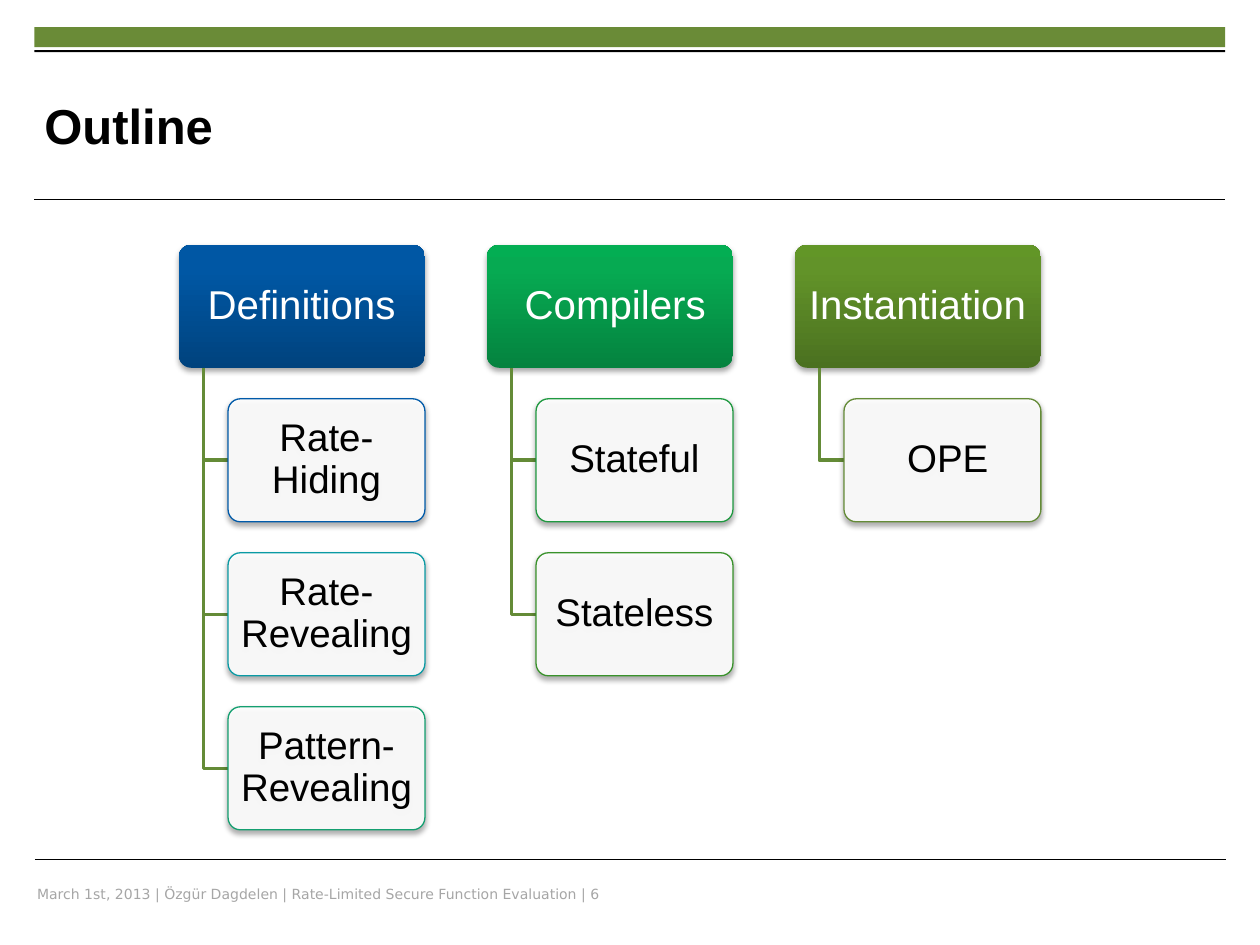
from copy import deepcopy
from lxml import etree
from pptx import Presentation
from pptx import util as u
from pptx.dml.color import RGBColor
from pptx.enum import shapes, text
from pptx.oxml.ns import qn

Pt = u.Pt
BLACK = RGBColor(0, 0, 0)
WHITE = RGBColor(255, 255, 255)
GRAY = RGBColor(0xA6, 0xA6, 0xA6)
BAND = RGBColor(0x6A, 0x8B, 0x37)
GREEN = RGBColor(0x64, 0x8B, 0x37)
BLUE = RGBColor(0x00, 0x5A, 0xA9)
TEAL = RGBColor(0x0A, 0x9A, 0xA4)
JADE = RGBColor(0x14, 0x9F, 0x70)
LEAF = RGBColor(0x1F, 0x99, 0x40)
MOSS = RGBColor(0x39, 0x92, 0x2B)
BLUES = [RGBColor(0x00, 0x43, 0x7E), RGBColor(0x00, 0x57, 0xA4), RGBColor(0x00, 0x58, 0xA5)]
GREENS = [RGBColor(0x05, 0x83, 0x3F), RGBColor(0x06, 0xAA, 0x52), RGBColor(0x03, 0xAE, 0x53)]
OLIVES = [RGBColor(0x4B, 0x71, 0x20), RGBColor(0x62, 0x93, 0x29), RGBColor(0x62, 0x96, 0x27)]

LEFT, TOP = 102.2, 139.9
STEP, ROW = 176, 88
WIDE, HIGH = 140.6, 70.3
RAIL, INDENT = 14.1, 28.1

COLUMNS = [
    ("Definitions", BLUES, [("Rate-Hiding", BLUE), ("Rate-Revealing", TEAL),
                            ("Pattern-Revealing", JADE)]),
    (" Compilers", GREENS, [("Stateful", LEAF), ("Stateless", MOSS)]),
    ("Instantiation", OLIVES, [(" OPE", GREEN)]),
]


def apply(item, values):
    for name, value in values.items():
        setattr(item, name, value)


class Page:
    title_font = {"name": "Arial", "size": Pt(28), "bold": True}
    head_font = {"name": "Arial", "size": Pt(23)}
    item_font = {"name": "Arial", "size": Pt(22)}
    foot_font = {"name": "DejaVu Sans", "size": Pt(8)}
    flush = dict.fromkeys(("margin_left", "margin_top", "margin_right", "margin_bottom"), 0)
    inner = {"margin_left": Pt(3.6), "margin_right": Pt(3.6),
             "margin_top": Pt(2), "margin_bottom": Pt(2)}
    middle = {"word_wrap": True, "vertical_anchor": text.MSO_ANCHOR.MIDDLE}
    center = {"alignment": text.PP_ALIGN.CENTER, "line_spacing": 0.9}
    shade = {"blurRad": "40000", "dist": "23000", "dir": "5400000", "rotWithShape": "0"}

    def __init__(self, slide):
        self.slide = slide

    def label(self, frame, words, font, color, frame_set, para_set):
        apply(frame, frame_set)
        para = frame.paragraphs[0]
        para.text = words
        apply(para, para_set)
        apply(para.font, font)
        para.font.color.rgb = color

    def title(self, words, x, y, w, h):
        box = self.slide.shapes.title
        apply(box, {"left": Pt(x), "top": Pt(y), "width": Pt(w), "height": Pt(h)})
        frame_set = {**self.flush, **self.middle, "auto_size": text.MSO_AUTO_SIZE.NONE}
        self.label(box.text_frame, words, self.title_font, BLACK, frame_set,
                   {"alignment": text.PP_ALIGN.LEFT})

    def footer(self, words, x, y, w, h):
        box = self.slide.shapes.add_textbox(Pt(x), Pt(y), Pt(w), Pt(h))
        frame_set = {"word_wrap": False, "auto_size": text.MSO_AUTO_SIZE.SHAPE_TO_FIT_TEXT}
        self.label(box.text_frame, words, self.foot_font, GRAY, frame_set,
                   {"alignment": text.PP_ALIGN.LEFT})

    def shape(self, kind, x, y, w, h):
        box = self.slide.shapes.add_shape(kind, Pt(x), Pt(y), Pt(w), Pt(h))
        box.shadow.inherit = False
        return box

    def bar(self, x, y, w, h, color):
        box = self.shape(shapes.MSO_SHAPE.RECTANGLE, x, y, w, h)
        box.fill.solid()
        box.fill.fore_color.rgb = color
        box.line.fill.background()

    def rule(self, x, y, w):
        line = self.slide.shapes.add_connector(
            shapes.MSO_CONNECTOR.STRAIGHT, Pt(x), Pt(y), Pt(x + w), Pt(y))
        line.line.color.rgb = BLACK
        line.line.width = Pt(0.6)
        etree.SubElement(line.element.spPr, qn("a:effectLst"))

    def card(self, words, x, y, w, font, color):
        box = self.shape(shapes.MSO_SHAPE.ROUNDED_RECTANGLE, x, y, w, HIGH)
        box.adjustments[0] = 0.1
        effects = box.element.spPr.find(qn("a:effectLst"))
        shadow = etree.SubElement(effects, qn("a:outerShdw"), self.shade)
        tint = etree.SubElement(shadow, qn("a:srgbClr"), val="000000")
        etree.SubElement(tint, qn("a:alpha"), val="35000")
        self.label(box.text_frame, words, font, color, {**self.inner, **self.middle}, self.center)
        return box

    def head(self, words, x, y, colors):
        box = self.card(words, x, y, WIDE, self.head_font, WHITE)
        box.line.fill.background()
        box.fill.gradient()
        box.fill.gradient_angle = 90
        stops = box.element.spPr.find(".//" + qn("a:gsLst"))
        stops.append(deepcopy(stops[0]))
        for stop, place, color in zip(box.fill.gradient_stops, (0, 0.8, 1), colors):
            stop.position = place
            stop.color.rgb = color

    def item(self, words, x, y, color):
        box = self.card(words, x, y, WIDE - INDENT, self.item_font, BLACK)
        box.fill.solid()
        box.fill.fore_color.rgb = WHITE
        tint = box.element.spPr.find(qn("a:solidFill"))[0]
        etree.SubElement(tint, qn("a:alpha"), val="90000")
        box.line.color.rgb = color
        box.line.width = Pt(0.75)

    def branch(self, x, y, end_x, end_y):
        route = self.slide.shapes.build_freeform(Pt(x), Pt(y))
        route.add_line_segments([(Pt(x), Pt(end_y)), (Pt(end_x), Pt(end_y))], close=False)
        line = route.convert_to_shape()
        line.shadow.inherit = False
        line.fill.background()
        line.line.color.rgb = GREEN
        line.line.width = Pt(2)

    def column(self, x, words, colors, items):
        self.head(words, x, TOP, colors)
        for row, (name, color) in enumerate(items, 1):
            y = TOP + row * ROW
            self.branch(x + RAIL, TOP + HIGH, x + INDENT, y + HIGH / 2)
            self.item(name, x + INDENT, y, color)


def main():
    deck = Presentation()
    apply(deck, {"slide_width": Pt(720), "slide_height": Pt(540)})
    page = Page(deck.slides.add_slide(deck.slide_layouts[5]))
    page.bar(19.7, 15.5, 680.4, 11.5, BAND)
    page.rule(19.7, 114.2, 680.4)
    page.bar(19.7, 28.7, 680.4, 1.2, BLACK)
    page.rule(19.9, 491, 680.4)
    page.footer("March 1st, 2013 | Özgür Dagdelen | Rate-Limited Secure Function Evaluation | 6",
                14.1, 502.3, 360, 17)
    page.title("Outline", 25.4, 38.3, 525, 66.5)
    for index, column in enumerate(COLUMNS):
        page.column(LEFT + index * STEP, *column)
    deck.save("out.pptx")


if __name__ == "__main__":
    main()
